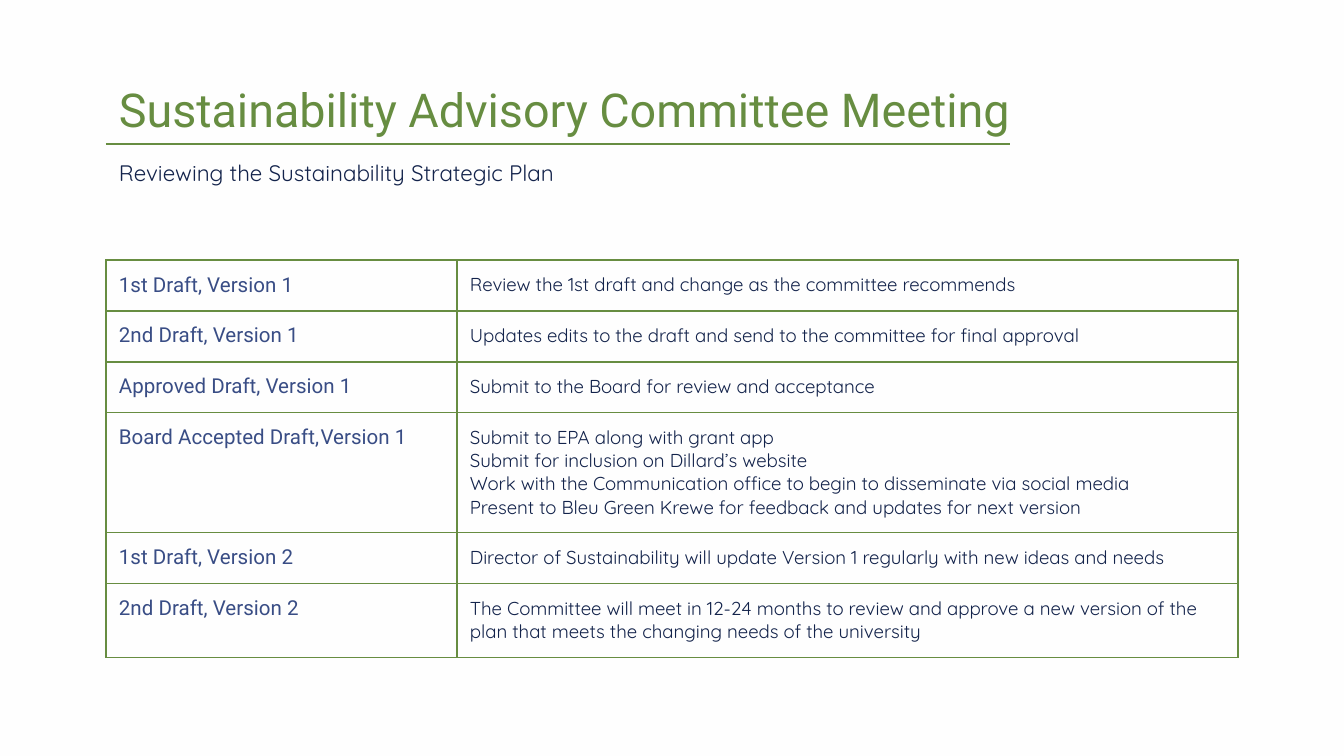
import pptx
import pptx.dml.color
import pptx.enum.shapes
import pptx.enum.text
import pptx.oxml
import pptx.oxml.ns
import pptx.util
from lxml import etree

RGBColor = pptx.dml.color.RGBColor
ANCHOR = pptx.enum.text.MSO_ANCHOR
qn = pptx.oxml.ns.qn

GREEN = RGBColor(0x67, 0x8D, 0x41)
BLUE = RGBColor(0x39, 0x4D, 0x85)
NAVY = RGBColor(0x13, 0x23, 0x4B)
PAPER = RGBColor(0xFE, 0xFE, 0xFE)

TITLE = "Sustainability Advisory Committee Meeting"
SUBTITLE = "Reviewing the Sustainability Strategic Plan"
STAGES = [
    ("1st Draft, Version 1",
     ["Review the 1st draft and change as the committee recommends"]),
    ("2nd Draft, Version 1",
     ["Updates edits to the draft and send to the committee for final approval"]),
    ("Approved Draft, Version 1",
     ["Submit to the Board for review and acceptance"]),
    ("Board Accepted Draft,\tVersion 1",
     ["Submit to EPA along with grant app",
      "Submit for inclusion on Dillard’s website",
      "Work with the Communication office to begin to disseminate via social media",
      "Present to Bleu Green Krewe for feedback and updates for next version"]),
    ("1st Draft, Version 2",
     ["Director of Sustainability will update Version 1 regularly with new ideas and needs"]),
    ("2nd Draft, Version 2",
     ["The Committee will meet in 12-24 months to review and approve a new version of the "
      "plan that meets the changing needs of the university"]),
]
ROW_HEIGHTS = [51, 51, 51, 120, 51, 74]
COLUMN_WIDTHS = [351, 781]
LEFT, TABLE_TOP, TEXT_WIDTH = 106, 260, 1133
PADDING = 13
VERSION_TAB = 216
LINE_WIDTH = pptx.util.Pt(0.75)


def px(n):
    return pptx.util.Emu(round(n * 914400 / 134.4))


def write(tf, lines, font, size, color):
    tf.text = "\n".join(lines)
    for p in tf.paragraphs:
        for r in p.runs:
            r.font.name = font
            r.font.size = pptx.util.Pt(size)
            r.font.color.rgb = color


def add_text(slide, top, height, text, font, size, color, anchor):
    tf = slide.shapes.add_textbox(px(LEFT), px(top), px(TEXT_WIDTH), px(height)).text_frame
    tf.word_wrap = True
    tf.vertical_anchor = anchor
    tf.margin_left = tf.margin_right = tf.margin_top = tf.margin_bottom = px(PADDING)
    write(tf, [text], font, size, color)


def add_tab_stop(p, position):
    tabs = etree.SubElement(p._p.get_or_add_pPr(), qn("a:tabLst"))
    etree.SubElement(tabs, qn("a:tab"), pos=str(px(position)), algn="l")


def style_cell(cell):
    """Set the padding and the four borders, and clear the fill."""
    cell.margin_left = cell.margin_right = cell.margin_top = cell.margin_bottom = px(PADDING)
    cell.vertical_anchor = ANCHOR.TOP
    tc_pr = cell._tc.get_or_add_tcPr()
    for side in ("a:lnL", "a:lnR", "a:lnT", "a:lnB"):
        ln = etree.SubElement(tc_pr, qn(side), w=str(LINE_WIDTH))
        fill = etree.SubElement(ln, qn("a:solidFill"))
        etree.SubElement(fill, qn("a:srgbClr"), val=str(GREEN))
    cell.fill.background()


def add_stage_table(slide):
    table = slide.shapes.add_table(
        len(STAGES), len(COLUMN_WIDTHS), px(LEFT), px(TABLE_TOP),
        px(sum(COLUMN_WIDTHS)), px(sum(ROW_HEIGHTS))).table
    table.first_row = table.horz_banding = False
    for column, width in zip(table.columns, COLUMN_WIDTHS):
        column.width = px(width)
    for row, height, (stage, actions) in zip(table.rows, ROW_HEIGHTS, STAGES):
        row.height = px(height)
        name_cell, action_cell = row.cells
        for cell in row.cells:
            style_cell(cell)
        if "\t" in stage:
            add_tab_stop(name_cell.text_frame.paragraphs[0], VERSION_TAB)
        write(name_cell.text_frame, [stage], "Roboto", 11, BLUE)
        write(action_cell.text_frame, actions, "Quicksand", 10, NAVY)


def add_title_rule(slide):
    line = slide.shapes.add_connector(
        pptx.enum.shapes.MSO_CONNECTOR.STRAIGHT, px(LEFT), px(144), px(1010), px(144))
    line.line.color.rgb = GREEN
    line.line.width = LINE_WIDTH
    etree.SubElement(line._element.spPr, qn("a:effectLst"))


def main():
    prs = pptx.Presentation()
    prs.slide_width, prs.slide_height = px(1344), px(756)
    slide = prs.slides.add_slide(prs.slide_layouts[6])
    slide.background.fill.solid()
    slide.background.fill.fore_color.rgb = PAPER
    add_text(slide, 66, 85, TITLE, "Roboto", 25, GREEN, ANCHOR.MIDDLE)
    add_stage_table(slide)
    add_text(slide, 146, 70, SUBTITLE, "Quicksand", 12, NAVY, ANCHOR.TOP)
    add_title_rule(slide)
    prs.save("out.pptx")


if __name__ == "__main__":
    main()
